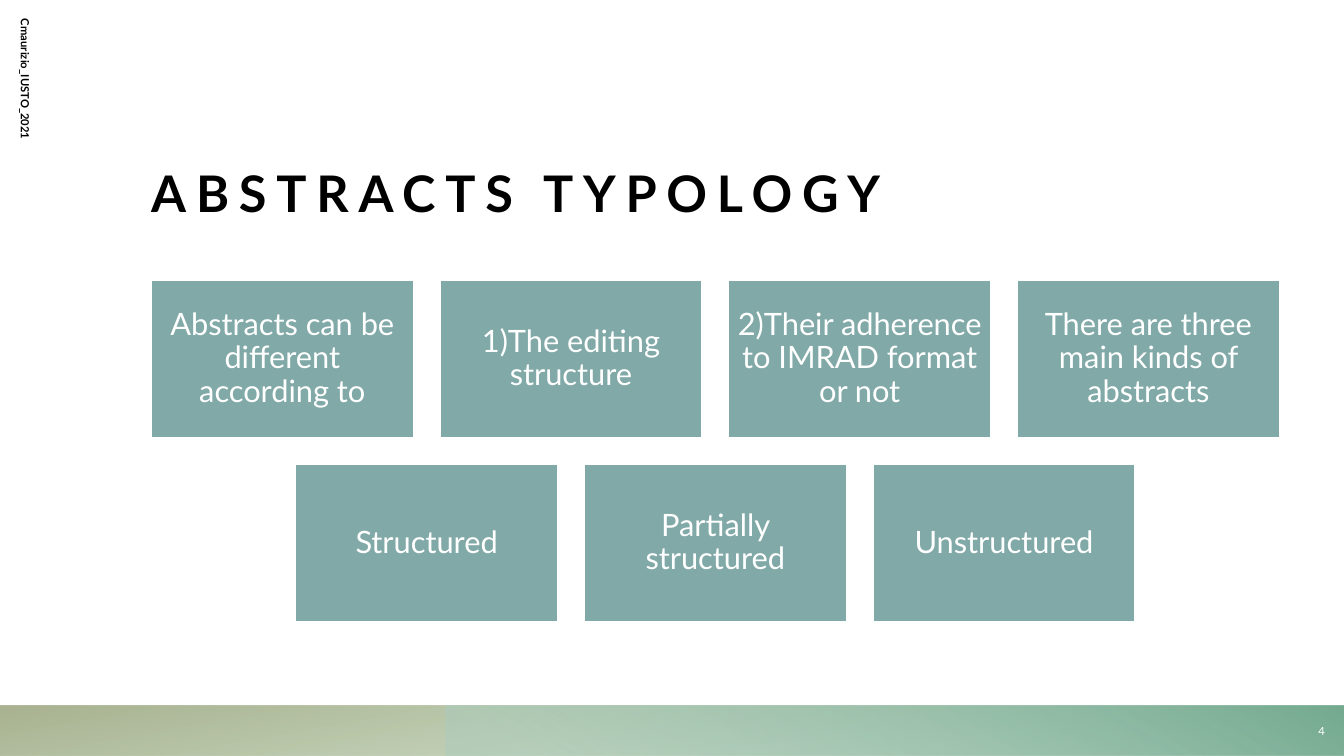
"""Build the slide on the typology of abstracts."""
from dataclasses import dataclass

from lxml import etree
from pptx import Presentation
from pptx.dml.color import RGBColor
from pptx.enum.shapes import MSO_SHAPE
from pptx.enum.text import MSO_ANCHOR, MSO_AUTO_SIZE, PP_ALIGN
from pptx.oxml.ns import qn
from pptx.slide import Slide
from pptx.text.text import TextFrame
from pptx.util import Inches, Pt

RECTANGLE = MSO_SHAPE.RECTANGLE
MIDDLE, BOTTOM = MSO_ANCHOR.MIDDLE, MSO_ANCHOR.BOTTOM
LEFT, CENTER, RIGHT = PP_ALIGN.LEFT, PP_ALIGN.CENTER, PP_ALIGN.RIGHT
NO_AUTOFIT = MSO_AUTO_SIZE.NONE

BLACK = RGBColor(0x00, 0x00, 0x00)
WHITE = RGBColor(0xFF, 0xFF, 0xFF)
TEAL = RGBColor(0x80, 0xA9, 0xA7)
LEAF = RGBColor(0x86, 0xAC, 0x76)
OLIVE = RGBColor(0x9A, 0xA5, 0x7D)
MINT = RGBColor(0xAC, 0xCD, 0xBD)
JADE = RGBColor(0x75, 0xAB, 0x91)
FONT = "Lato"

GRID_LEFT, GRID_TOP, GRID_WIDTH = 1.5, 2.78, 11.19
CARD_WIDTH, CARD_HEIGHT, ROW_PITCH = 2.6, 1.56, 1.83
CARD_INSET = 0.09
CARD_ROWS = [
    [
        "Abstracts can be different according to",
        "1)The editing structure",
        "2)Their adherence to IMRAD format or not",
        "There are three main kinds of abstracts",
    ],
    ["Structured", "Partially structured", "Unstructured"],
]


@dataclass(frozen=True)
class Stop:
    position: float
    color: RGBColor
    opacity: int


@dataclass(frozen=True)
class Band:
    left: float
    width: float
    rotation: int
    angle: int
    stops: tuple[Stop, Stop]


@dataclass(frozen=True)
class Label:
    text: str
    left: float
    top: float
    width: float
    height: float
    color: RGBColor
    align: PP_ALIGN
    bold: bool = False
    rotation: int = 0


BANDS = [
    Band(0, 13.33, 180, 100, (Stop(0.14, LEAF, 28), Stop(1, OLIVE, 85))),
    Band(4.42, 8.92, 0, 240, (Stop(0.09, MINT, 55), Stop(0.99, JADE, 100))),
]
LABELS = [
    Label("Cmaurizio_IUSTO_2021", -2, 2.09, 4.5, 0.5, BLACK, LEFT, True, 90),
    Label("4", 12.76, 7.01, 0.48, 0.49, WHITE, RIGHT),
]


def write(frame: TextFrame, text: str, size: int, color: RGBColor,
          align: PP_ALIGN, bold: bool = False, spacing: int = 0) -> None:
    """Put one formatted run in the first paragraph of a frame."""
    frame.word_wrap = True
    frame.auto_size = NO_AUTOFIT
    paragraph = frame.paragraphs[0]
    paragraph.alignment = align
    run = paragraph.add_run()
    run.text = text
    run.font.name = FONT
    run.font.size = Pt(size)
    run.font.bold = bold
    run.font.color.rgb = color
    if spacing:
        run.font._element.set("spc", str(spacing * 100))


def set_insets(frame: TextFrame, inset: float) -> None:
    """Give a frame the same inset on all sides."""
    frame.margin_left = frame.margin_right = Inches(inset)
    frame.margin_top = frame.margin_bottom = Inches(inset)


def add_band(slide: Slide, band: Band) -> None:
    """Draw a mirrored gradient band along the foot of the slide."""
    strip = slide.shapes.add_shape(
        RECTANGLE, Inches(band.left), Inches(7), Inches(band.width), Inches(0.5))
    strip.shadow.inherit = False
    strip.line.fill.background()
    strip.rotation = band.rotation
    strip._element.spPr.find(qn("a:xfrm")).set("flipH", "1")
    strip.fill.gradient()
    strip.fill.gradient_angle = 360 - band.angle
    for gradient_stop, stop in zip(strip.fill.gradient_stops, band.stops):
        gradient_stop.position = stop.position
        gradient_stop.color.rgb = stop.color
    colors = strip._element.spPr.iter(qn("a:srgbClr"))
    for color, stop in zip(colors, band.stops):
        etree.SubElement(color, qn("a:alpha")).set("val", str(stop.opacity * 1000))


def add_title(slide: Slide) -> None:
    """Place and fill the title."""
    title = slide.shapes.title
    title.left, title.top = Inches(1.5), Inches(0.87)
    title.width, title.height = Inches(11.2), Inches(1.35)
    set_insets(title.text_frame, 0)
    title.text_frame.vertical_anchor = BOTTOM
    write(title.text_frame, "ABSTRACTS TYPOLOGY", 36, BLACK, LEFT, True, 7)
    title.text_frame.paragraphs[0].line_spacing = 0.9


def add_card(slide: Slide, text: str, left: float, top: float) -> None:
    """Draw one card with centred text."""
    card = slide.shapes.add_shape(
        RECTANGLE, Inches(left), Inches(top), Inches(CARD_WIDTH), Inches(CARD_HEIGHT))
    card.shadow.inherit = False
    card.fill.solid()
    card.fill.fore_color.rgb = TEAL
    card.line.color.rgb = WHITE
    card.line.width = Pt(1)
    set_insets(card.text_frame, CARD_INSET)
    card.text_frame.vertical_anchor = MIDDLE
    write(card.text_frame, text, 22, WHITE, CENTER)
    card.text_frame.paragraphs[0].line_spacing = 0.9


def add_cards(slide: Slide) -> None:
    """Lay out the rows of cards, each centred on the widest row."""
    columns = max(len(row) for row in CARD_ROWS)
    pitch = (GRID_WIDTH - CARD_WIDTH) / (columns - 1)
    for row_index, row in enumerate(CARD_ROWS):
        row_left = GRID_LEFT + (columns - len(row)) * pitch / 2
        for column, text in enumerate(row):
            add_card(slide, text, row_left + column * pitch,
                     GRID_TOP + row_index * ROW_PITCH)


def add_label(slide: Slide, label: Label) -> None:
    """Add a small text at the edge of the slide."""
    box = slide.shapes.add_textbox(
        Inches(label.left), Inches(label.top), Inches(label.width), Inches(label.height))
    box.rotation = label.rotation
    box.text_frame.vertical_anchor = MIDDLE
    write(box.text_frame, label.text, 8, label.color, label.align, label.bold)


def main() -> None:
    """Create and save the presentation."""
    deck = Presentation()
    deck.slide_width, deck.slide_height = Inches(13.33), Inches(7.5)
    slide = deck.slides.add_slide(deck.slide_layouts.get_by_name("Title Only"))
    for band in BANDS:
        add_band(slide, band)
    add_title(slide)
    add_cards(slide)
    for label in LABELS:
        add_label(slide, label)
    deck.save("out.pptx")


if __name__ == "__main__":
    main()
